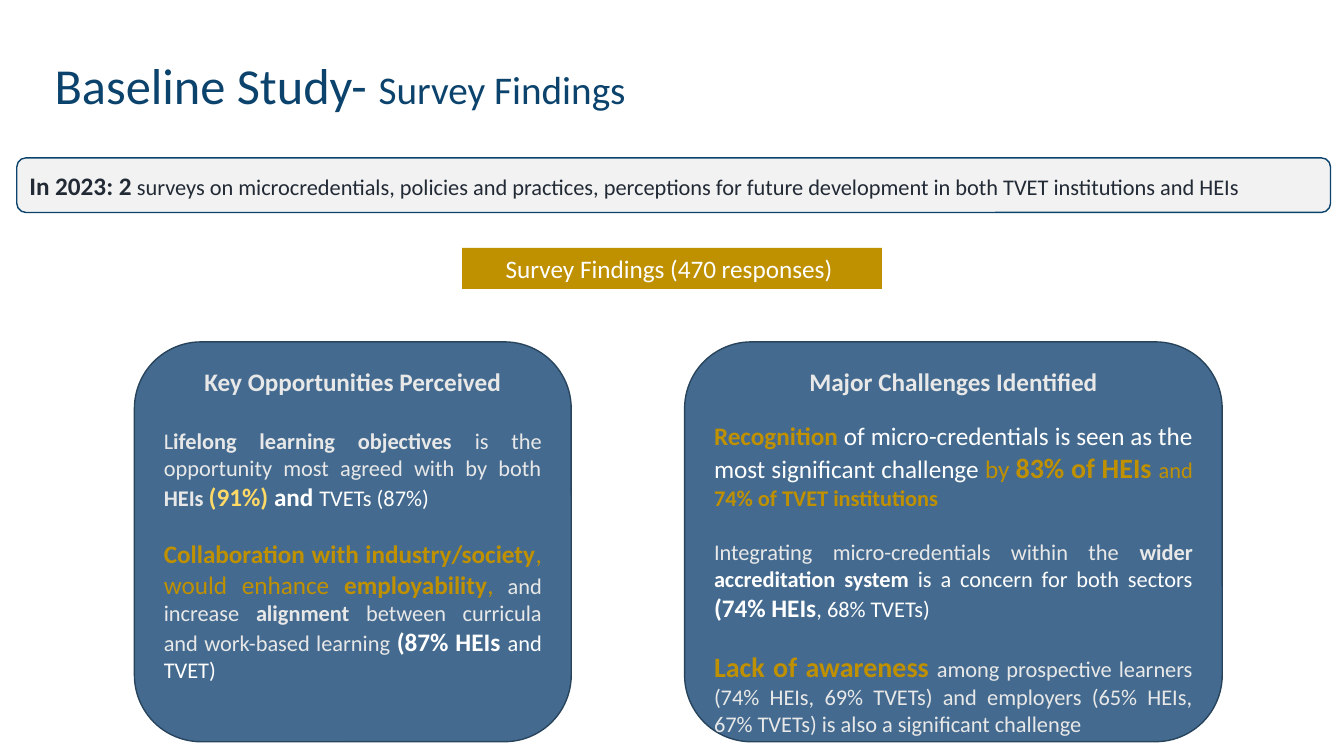
from lxml import etree
from pptx import Presentation
from pptx import util as u
from pptx.dml.color import RGBColor
from pptx.enum import shapes, text
from pptx.oxml.ns import qn

CELL = u.Inches(1 / 12)
COLS, ROWS = 160, 90
FONT = "Calibri"
HUES = {
    "navy": "0B436D", "ink": "222A35", "mist": "F2F2F2", "gold": "BF9000",
    "sun": "FFD966", "pale": "E8E8E8", "white": "FFFFFF",
    "blue": "1F4E79", "edge": "28445D",
}
SIDES = {
    "left": text.PP_ALIGN.LEFT,
    "mid": text.PP_ALIGN.CENTER,
    "full": text.PP_ALIGN.JUSTIFY,
}


def hue(name):
    """Return the named colour."""
    return RGBColor.from_string(HUES[name])


def span(*cells):
    """Turn grid cells into lengths."""
    return [u.Emu(round(c * CELL)) for c in cells]


def write(par, runs, side, gap=0):
    """Fill a paragraph with (words, size, colour, bold) runs."""
    par.alignment = SIDES[side]
    if gap:
        par.space_before = u.Pt(gap)
    for words, size, tint, bold in runs:
        run = par.add_run()
        run.text = words
        font = run.font
        font.name, font.size, font.bold = FONT, u.Pt(size), bold
        font.color.rgb = hue(tint)


def head(slide, area, runs):
    """Place and fill the slide title."""
    title = slide.shapes.title
    title.left, title.top, title.width, title.height = span(*area)
    frame = title.text_frame
    frame.auto_size = text.MSO_AUTO_SIZE.NONE
    frame.vertical_anchor = text.MSO_ANCHOR.MIDDLE
    par = frame.paragraphs[0]
    par.line_spacing = 0.9
    write(par, runs, "left")


def block(slide, kind, area, fill, edge=None):
    """Add a filled shape with an optional outline."""
    shape = slide.shapes.add_shape(kind, *span(*area))
    shape.shadow.inherit = False
    shape.fill.solid()
    shape.fill.fore_color.rgb = hue(fill)
    if edge:
        shape.line.color.rgb = hue(edge)
        shape.line.width = u.Pt(1)
    else:
        shape.line.fill.background()
    shape.text_frame.word_wrap = True
    return shape


def strip(slide, kind, area, fill, edge, side, runs):
    """Add a one-line bar."""
    frame = block(slide, kind, area, fill, edge).text_frame
    frame.vertical_anchor = text.MSO_ANCHOR.MIDDLE
    write(frame.paragraphs[0], runs, side)


def card(slide, left, width, name, parts):
    """Add a see-through card with a heading and spaced paragraphs."""
    shape = block(slide, shapes.MSO_SHAPE.ROUNDED_RECTANGLE,
                  (left, 40.7, width, 47.6), "blue", "edge")
    tint = shape.fill._xPr.find(qn("a:solidFill"))[0]
    etree.SubElement(tint, qn("a:alpha"), val="83000")
    frame = shape.text_frame
    frame.vertical_anchor = text.MSO_ANCHOR.TOP
    write(frame.paragraphs[0], [(name, 18, "pale", True)], "mid")
    for gap, runs in parts:
        write(frame.add_paragraph(), runs, "full", gap)


def main():
    """Build the survey findings slide."""
    deck = Presentation()
    deck.slide_width, deck.slide_height = span(COLS, ROWS)
    slide = deck.slides.add_slide(deck.slide_layouts[5])
    head(slide, (5.3, 1.8, 138, 17.4), [
        ("Baseline Study- ", 36, "navy", False),
        ("Survey Findings", 28, "navy", False),
    ])
    strip(slide, shapes.MSO_SHAPE.ROUNDED_RECTANGLE, (2, 18.8, 156.4, 6.5),
          "mist", "navy", "full", [
              ("In 2023: 2", 18, "ink", True),
              (" surveys on microcredentials, policies and practices, "
               "perceptions for future development in both TVET "
               "institutions and HEIs", 16, "ink", False),
          ])
    strip(slide, shapes.MSO_SHAPE.RECTANGLE, (55, 29.5, 50, 4.9),
          "gold", None, "mid",
          [("Survey Findings (470 responses) ", 18, "white", False)])
    card(slide, 16, 52, "Key Opportunities Perceived", [
        (22, [
            ("L", 16, "pale", False),
            ("ifelong learning objectives", 16, "pale", True),
            (" is the opportunity most agreed with by both ",
             16, "pale", False),
            ("HEIs ", 16, "pale", True),
            ("(91%) ", 18, "sun", True),
            ("and ", 18, "white", True),
            ("TVETs (87%)", 16, "white", False),
        ]),
        (19.5, [
            ("Collaboration with industry/society", 18, "gold", True),
            (", would enhance ", 18, "gold", False),
            ("employability", 18, "gold", True),
            (",", 18, "gold", False),
            (" and increase ", 16, "pale", False),
            ("alignment", 16, "pale", True),
            (" between curricula and work-based learning ",
             16, "pale", False),
            ("(87% HEIs ", 18, "white", True),
            ("and TVET)", 16, "white", False),
        ]),
    ])
    card(slide, 81.5, 64, "Major Challenges Identified", [
        (17, [
            ("Recognition ", 18, "gold", True),
            ("of micro-credentials is seen as the most significant "
             "challenge ", 18, "white", False),
            ("by ", 18, "gold", False),
            ("83% of HEIs ", 20, "gold", True),
            ("and ", 16, "gold", False),
            ("74% of TVET institutions", 16, "gold", True),
        ]),
        (19.5, [
            ("Integrating micro-credentials within the ",
             16, "pale", False),
            ("wider ", 16, "pale", True),
            ("accreditation system", 16, "white", True),
            (" is a concern for both sectors ", 16, "white", False),
            ("(74% HEIs", 18, "white", True),
            (", 68% TVETs)", 16, "white", False),
        ]),
        (19.5, [
            ("Lack of awareness", 20, "gold", True),
            (" ", 18, "sun", False),
            ("among prospective learners (74% HEIs, 69% TVETs) and "
             "employers (65% HEIs, 67% TVETs) is also a significant "
             "challenge", 16, "pale", False),
        ]),
    ])
    deck.save("out.pptx")


if __name__ == "__main__":
    main()
